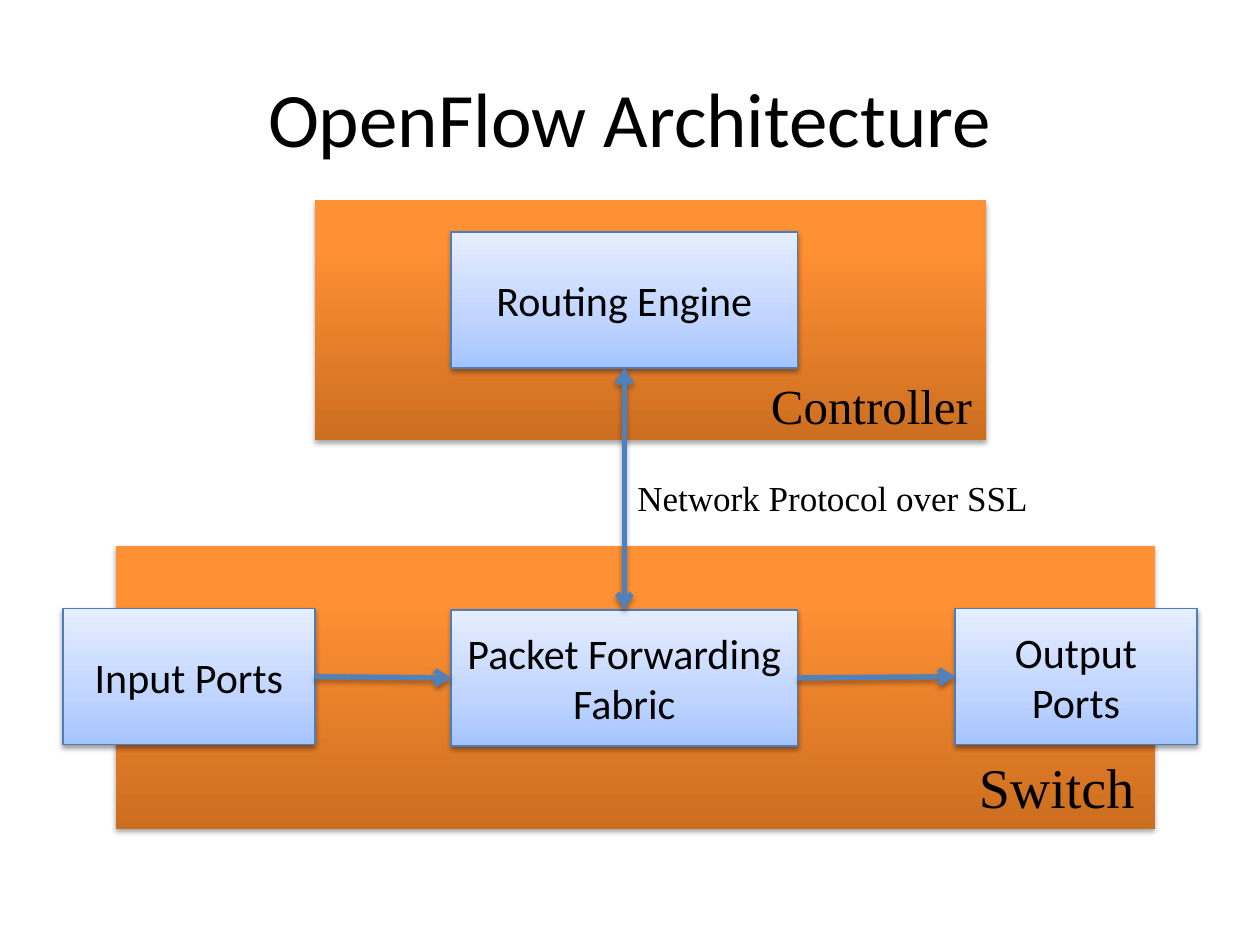
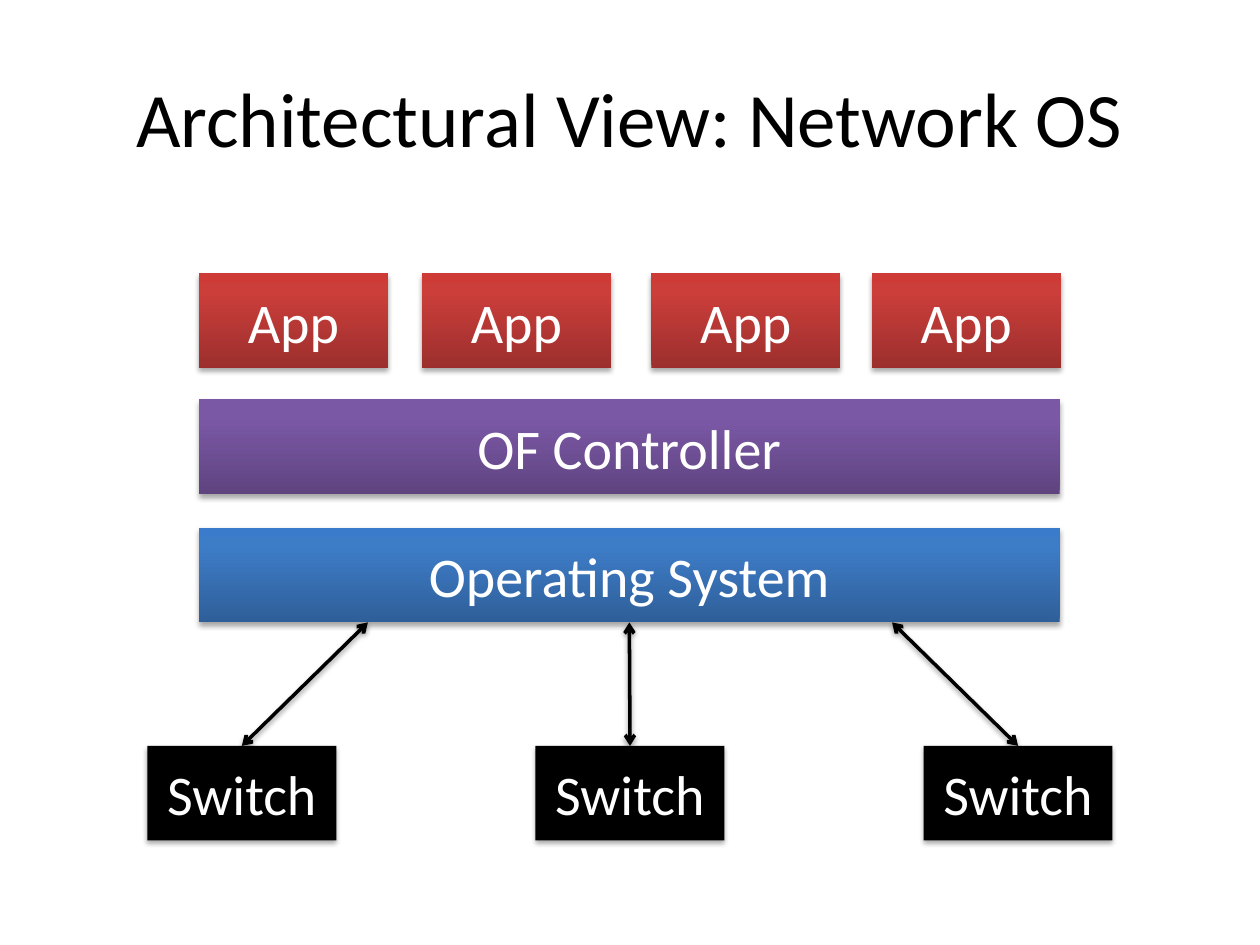
import lxml.etree
import pptx
import pptx.dml.color
import pptx.enum.dml
import pptx.enum.shapes
import pptx.enum.text
import pptx.oxml.ns
import pptx.util
from collections import namedtuple

Inches = pptx.util.Inches
RGBColor = pptx.dml.color.RGBColor
Align = pptx.enum.text.PP_ALIGN
Anchor = pptx.enum.text.MSO_ANCHOR
qn = pptx.oxml.ns.qn

BLACK = RGBColor(0x00, 0x00, 0x00)
WHITE = RGBColor(0xFF, 0xFF, 0xFF)
NODE_LINE = RGBColor(0x4B, 0x7E, 0xBC)
FLOW_BLUE = RGBColor(0x4F, 0x81, 0xBD)
ORANGE = ((0, RGBColor(0xCC, 0x6E, 0x20)), (80, RGBColor(0xFF, 0x90, 0x34)), (100, RGBColor(0xFF, 0x91, 0x36)))
PALE_BLUE = ((0, RGBColor(0xA4, 0xC4, 0xFF)), (35, RGBColor(0xBF, 0xD4, 0xFF)), (100, RGBColor(0xE6, 0xEE, 0xFF)))
PURPLE = ((0, RGBColor(0x5F, 0x44, 0x80)), (80, RGBColor(0x7B, 0x58, 0xA6)), (100, RGBColor(0x7C, 0x57, 0xA8)))
BLUE = ((0, RGBColor(0x2F, 0x5F, 0x99)), (80, RGBColor(0x3D, 0x7C, 0xC7)), (100, RGBColor(0x3A, 0x7C, 0xCB)))
RED = ((0, RGBColor(0x9C, 0x2F, 0x2D)), (80, RGBColor(0xCB, 0x3E, 0x3A)), (100, RGBColor(0xCE, 0x3B, 0x37)))

SANS = "Calibri"
SERIF = "Times New Roman"
SOFT_SHADOW = (35, 1.8)
CLOSE_SHADOW = (38, 1.6)
TOP, LEFT, BOTTOM, RIGHT = range(4)


class Box(namedtuple("Box", "left top width height")):
    def inner(self, left, top, width, height):
        return Box(self.left + left, self.top + top, width, height)

    def lengths(self):
        return [Inches(value) for value in self]


def write_text(frame, text, *, size, color=BLACK, font=SANS, align=Align.CENTER,
               anchor=Anchor.MIDDLE, wrap=True):
    frame.word_wrap = wrap
    frame.vertical_anchor = anchor
    para = frame.paragraphs[0]
    para.alignment = align
    span = para.add_run()
    span.text = text
    span.font.size = pptx.util.Pt(size)
    span.font.name = font
    span.font.color.rgb = color


def add_shadow(effects, strength):
    alpha, distance = strength
    shadow = lxml.etree.SubElement(
        effects, qn("a:outerShdw"), blurRad=str(pptx.util.Pt(3.1)),
        dist=str(pptx.util.Pt(distance)), dir="5400000", rotWithShape="0")
    color = lxml.etree.SubElement(shadow, qn("a:srgbClr"), val=str(BLACK))
    lxml.etree.SubElement(color, qn("a:alpha"), val=str(alpha * 1000))


def fill_gradient(shape, stops):
    shape.fill.gradient()
    shape.fill.gradient_angle = 90
    stop_list = shape._element.spPr.find(".//" + qn("a:gsLst"))
    stop_list[:] = []
    for position, color in stops:
        stop = lxml.etree.SubElement(stop_list, qn("a:gs"), pos=str(position * 1000))
        lxml.etree.SubElement(stop, qn("a:srgbClr"), val=str(color))


def add_block(page, box, fill, text="", *, size=32, color=WHITE, line=None, shadow=SOFT_SHADOW):
    block = page.shapes.add_shape(pptx.enum.shapes.MSO_SHAPE.RECTANGLE, *box.lengths())
    if isinstance(fill, RGBColor):
        block.fill.solid()
        block.fill.fore_color.rgb = fill
    else:
        fill_gradient(block, fill)
    if line is None:
        block.line.fill.background()
    else:
        block.line.color.rgb = line
        block.line.width = pptx.util.Pt(0.75)
    block.shadow.inherit = False
    add_shadow(block._element.spPr.find(qn("a:effectLst")), shadow)
    if text:
        write_text(block.text_frame, text, size=size, color=color)
    return block


def add_node(page, box, text):
    return add_block(page, box, PALE_BLUE, text, size=24, color=BLACK,
                     line=NODE_LINE, shadow=CLOSE_SHADOW)


def add_label(page, box, text, size):
    label = page.shapes.add_textbox(*box.lengths())
    write_text(label.text_frame, text, size=size, font=SERIF, align=Align.LEFT,
               anchor=Anchor.TOP, wrap=False)
    label.text_frame.auto_size = pptx.enum.text.MSO_AUTO_SIZE.SHAPE_TO_FIT_TEXT


def add_arrow(page, start, start_side, end, end_side, *, color=FLOW_BLUE, width=3,
              both=False, shadow=SOFT_SHADOW, start_x=None):
    start_x = start.left + start.width // 2 if start_x is None else Inches(start_x)
    arrow = page.shapes.add_connector(
        pptx.enum.shapes.MSO_CONNECTOR.STRAIGHT,
        start_x, start.top + start.height, end.left, end.top)
    if start_side is not None:
        arrow.begin_connect(start, start_side)
    arrow.end_connect(end, end_side)
    arrow.line.color.rgb = color
    arrow.line.width = pptx.util.Pt(width)
    line = arrow.line._get_or_add_ln()
    for tag in ("a:headEnd", "a:tailEnd") if both else ("a:tailEnd",):
        lxml.etree.SubElement(line, qn(tag), type="arrow")
    add_shadow(lxml.etree.SubElement(arrow._element.spPr, qn("a:effectLst")), shadow)


def add_page(deck, title):
    page = deck.slides.add_slide(deck.slide_layouts[6])
    heading = page.shapes.add_textbox(*Box(0.5, 0.3, 9, 1.25).lengths())
    write_text(heading.text_frame, title, size=44)
    return page


def add_controller(page, box):
    add_block(page, box, ORANGE)
    engine = add_node(page, box.inner(1.08, 0.25, 2.75, 1.08), "Routing Engine")
    add_label(page, box.inner(3.52, 1.34, 1.81, 0.57), "Controller", 28)
    return engine


def add_switch(page, box):
    add_block(page, box, ORANGE)
    fabric = add_node(page, box.inner(2.66, 0.51, 2.75, 1.08), "Packet Forwarding Fabric")
    inputs = add_node(page, box.inner(-0.42, 0.5, 2, 1.08), "Input Ports")
    outputs = add_node(page, box.inner(6.66, 0.5, 1.92, 1.08), "Output Ports")
    add_arrow(page, inputs, RIGHT, fabric, LEFT)
    add_arrow(page, fabric, RIGHT, outputs, LEFT)
    add_label(page, box.inner(6.75, 1.59, 1.45, 0.64), "Switch", 32)
    return fabric


def add_software_stack(page, box):
    for offset in (0, 1.77, 3.59, 5.34):
        add_block(page, box.inner(offset, 0, 1.5, 0.75), RED, "App")
    add_block(page, box.inner(0, 1, box.width, 0.75), PURPLE, "OF Controller")
    return add_block(page, box.inner(0, 2.02, box.width, 0.75), BLUE, "Operating System")


def add_switch_row(page, box, system):
    pitch = (box.width - 1.5) / 2
    for index, start_x in enumerate((2.92, None, 7.08)):
        switch = add_block(page, box.inner(index * pitch, 0, 1.5, box.height), BLACK, "Switch")
        side = BOTTOM if start_x is None else None
        add_arrow(page, system, side, switch, TOP, color=BLACK, width=2, both=True,
                  shadow=CLOSE_SHADOW, start_x=start_x)


def build_openflow_page(deck):
    page = add_page(deck, "OpenFlow Architecture")
    engine = add_controller(page, Box(2.5, 1.59, 5.33, 1.9))
    fabric = add_switch(page, Box(0.92, 4.33, 8.25, 2.25))
    add_arrow(page, engine, BOTTOM, fabric, TOP, both=True)
    add_label(page, Box(4.96, 3.73, 3.32, 0.44), "Network Protocol over SSL", 20)


def build_network_os_page(deck):
    page = add_page(deck, "Architectural View: Network OS")
    system = add_software_stack(page, Box(1.58, 2.17, 6.83, 2.77))
    add_switch_row(page, Box(1.17, 5.92, 7.66, 0.75), system)


def main():
    deck = pptx.Presentation()
    deck.slide_width = Inches(10)
    deck.slide_height = Inches(7.5)
    build_openflow_page(deck)
    build_network_os_page(deck)
    deck.save("out.pptx")


if __name__ == "__main__":
    main()
